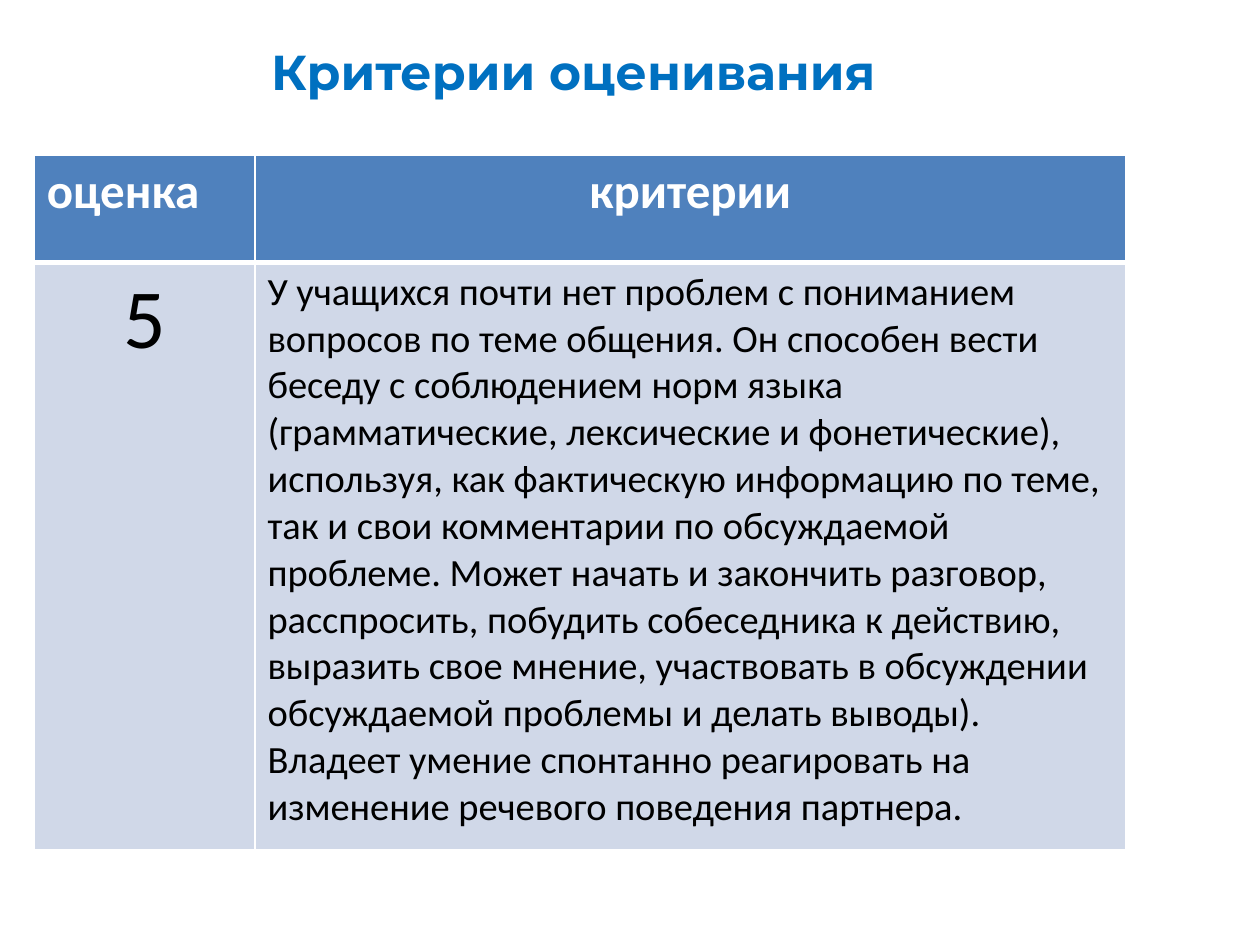
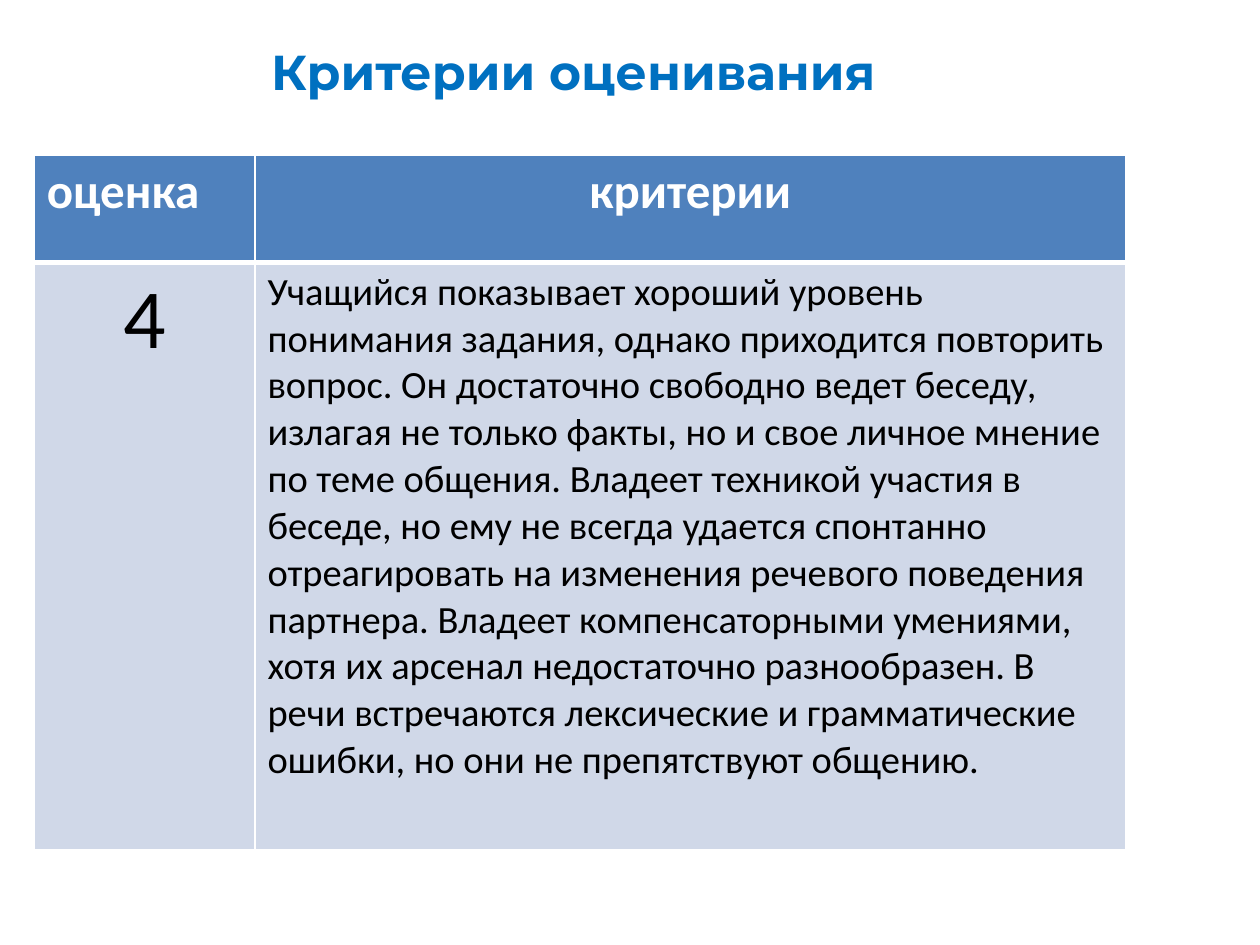
from lxml import etree
from pptx import Presentation
from pptx import util as u
from pptx.dml.color import RGBColor
from pptx.enum import text
from pptx.oxml.ns import qn

# Content
TITLE = "Критерии оценивания"
HEADERS = ("оценка", "критерии")
GRADES = [
    ("5", "У учащихся почти нет проблем с пониманием вопросов по теме общения. "
          "Он способен вести беседу с соблюдением норм языка (грамматические, "
          "лексические и фонетические), используя, как фактическую информацию по теме, "
          "так и свои комментарии по обсуждаемой проблеме. Может начать и закончить "
          "разговор, расспросить, побудить собеседника к действию, выразить свое мнение, "
          "участвовать в обсуждении обсуждаемой проблемы и делать выводы). Владеет умение "
          "спонтанно реагировать на изменение речевого поведения партнера."),
    ("4", "Учащийся показывает хороший уровень понимания задания, однако приходится "
          "повторить вопрос. Он достаточно свободно ведет беседу, излагая не только факты, "
          "но и свое личное мнение по теме общения. Владеет техникой участия в беседе, "
          "но ему не всегда удается спонтанно отреагировать на изменения речевого поведения "
          "партнера. Владеет компенсаторными умениями, хотя их арсенал недостаточно "
          "разнообразен. В речи встречаются лексические и грамматические ошибки, "
          "но они не препятствуют общению."),
]

# Shared look
BLUE, HEAD, BODY, WHITE, BLACK = "0070C0", "4F81BD", "D0D8E8", "FFFFFF", "000000"
COLS = (u.Cm(4.45), u.Cm(17.55))
ROWS = (u.Cm(2.16), u.Cm(11.84))
LEFT, CENTER = text.PP_ALIGN.LEFT, text.PP_ALIGN.CENTER


def rgb(value):
    return RGBColor.from_string(value)


def style(p, font, size, color, bold, align):
    p.alignment = align
    p.font.name, p.font.size, p.font.bold = font, u.Pt(size), bold
    p.font.color.rgb = rgb(color)


def borders(cell, top, bottom):
    tcPr = cell._tc.get_or_add_tcPr()
    for side, width in (("L", 1), ("R", 1), ("T", top), ("B", bottom)):
        ln = etree.SubElement(tcPr, qn("a:ln" + side), w=str(u.Pt(width)))
        fill = etree.SubElement(ln, qn("a:solidFill"))
        etree.SubElement(fill, qn("a:srgbClr"), val=WHITE)


def add_title(s):
    sp = s.shapes.title
    sp.left, sp.top, sp.width, sp.height = u.Cm(0), u.Cm(0.71), u.Cm(23.11), u.Cm(1.45)
    tf = sp.text_frame
    tf.text = TITLE
    tf.auto_size = text.MSO_AUTO_SIZE.NONE
    tf.vertical_anchor = text.MSO_ANCHOR.TOP
    style(tf.paragraphs[0], "Montserrat", 28, BLUE, True, CENTER)


def add_criteria(s, grade):
    table = s.shapes.add_table(2, 2, u.Cm(0.69), u.Cm(3.13), sum(COLS), sum(ROWS)).table
    for col, width in zip(table.columns, COLS):
        col.width = width
    for row, height in zip(table.rows, ROWS):
        row.height = height

    # Per row: texts, fill, text colour, bold, sizes, alignments, top and bottom border
    rows = [
        (HEADERS, HEAD, WHITE, True, (28, 28), (LEFT, CENTER), 1, 3),
        (grade, BODY, BLACK, False, (48, 22), (CENTER, LEFT), 3, 1),
    ]
    for i, (texts, fill, color, bold, sizes, aligns, top, bottom) in enumerate(rows):
        for j, (words, size, align) in enumerate(zip(texts, sizes, aligns)):
            cell = table.cell(i, j)
            cell.text = words
            style(cell.text_frame.paragraphs[0], "Calibri", size, color, bold, align)
            borders(cell, top, bottom)
            cell.fill.solid()
            cell.fill.fore_color.rgb = rgb(fill)


def main():
    prs = Presentation()
    prs.slide_width, prs.slide_height = u.Cm(25.4), u.Cm(19.05)
    for grade in GRADES:
        s = prs.slides.add_slide(prs.slide_layouts[5])
        add_title(s)
        add_criteria(s, grade)
    prs.save("out.pptx")


if __name__ == "__main__":
    main()
